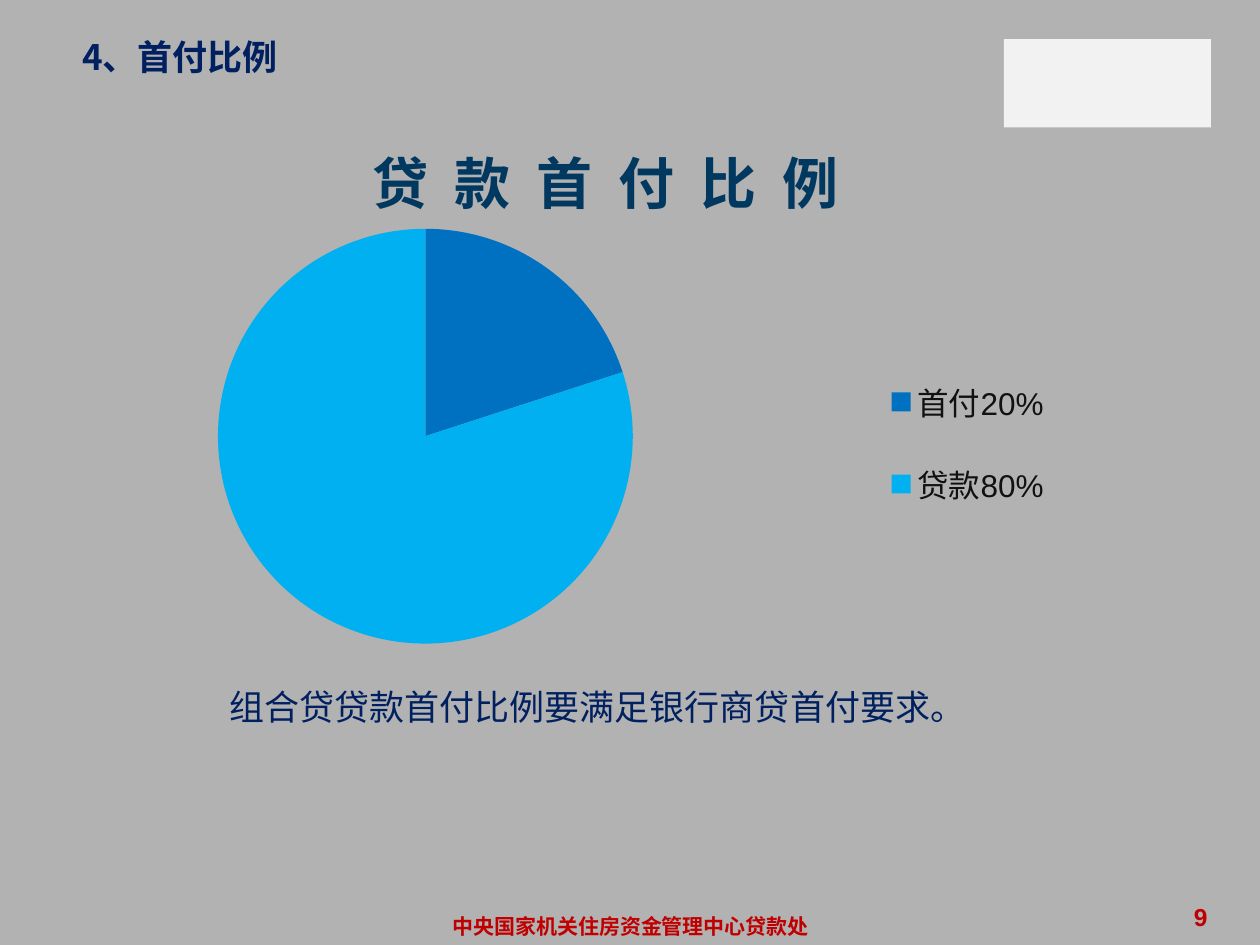
from lxml.etree import SubElement
from pptx import Presentation
from pptx.chart.data import CategoryChartData
from pptx.dml.color import RGBColor
from pptx.enum.chart import XL_CHART_TYPE, XL_LEGEND_POSITION
from pptx.enum.shapes import MSO_SHAPE
from pptx.enum.text import MSO_ANCHOR, PP_ALIGN
from pptx.oxml.ns import qn
from pptx.util import Cm, Pt

# Content
HEADING = "4、首付比例"
CHART_TITLE = "贷款首付比例"
SHARES = {"首付20%": 20, "贷款80%": 80}
NOTE = "组合贷贷款首付比例要满足银行商贷首付要求。"
FOOTER = "中央国家机关住房资金管理中心贷款处"
PAGE_NUMBER = "9"

THEME = {
    "latin": "Arial", "cjk": "Noto Sans CJK SC",
    "background": "B2B2B2", "panel": "F2F2F2",
    "navy": "002060", "red": "C00000", "title": "003860", "legend": "111111",
    "slices": ("0070C0", "00B0F0"),
    "body_size": 20, "chart_title_size": 32, "legend_size": 18,
    "footer_size": 12, "number_size": 14,
}


def color(name):
    return RGBColor.from_string(THEME.get(name, name))


def style_font(font, face, size, tint, bold=False):
    font.name = THEME[face]
    font.size = Pt(THEME[size])
    font.color.rgb = color(tint)
    font.bold = bold


def set_east_asian(properties):
    """Name the Chinese typeface right after the Latin one."""
    face = properties.makeelement(qn("a:ea"), {"typeface": THEME["cjk"]})
    properties.find(qn("a:latin")).addnext(face)


def write_text(box, place, text, face, size, tint, bold=False,
               align=PP_ALIGN.LEFT, anchor=MSO_ANCHOR.TOP):
    box.left, box.top, box.width, box.height = map(Cm, place)
    frame = box.text_frame
    frame.text = text
    frame.word_wrap = True
    frame.vertical_anchor = anchor
    para = frame.paragraphs[0]
    para.alignment = align
    span = para.runs[0]
    style_font(span.font, face, size, tint, bold)
    set_east_asian(span.font._element)


def place_part(part, previous, **fractions):
    """Give a chart part a manual layout, in fractions of the chart."""
    for old in part.findall(qn("c:layout")):
        part.remove(old)
    layout = part.makeelement(qn("c:layout"), {})
    if previous is None:
        part.insert(0, layout)
    else:
        part.find(qn(previous)).addnext(layout)
    manual = SubElement(layout, qn("c:manualLayout"))
    if previous is None:
        SubElement(manual, qn("c:layoutTarget"), val="inner")
    for mode in ("xMode", "yMode"):
        SubElement(manual, qn(f"c:{mode}"), val="edge")
    for name, value in fractions.items():
        SubElement(manual, qn(f"c:{name}"), val=str(value))


def add_share_chart(page):
    data = CategoryChartData()
    data.categories = list(SHARES)
    data.add_series("Series 1", list(SHARES.values()))
    chart = page.shapes.add_chart(XL_CHART_TYPE.PIE, Cm(1.57), Cm(1.78),
                                  Cm(21.23), Cm(13.49), data).chart
    style_font(chart.font, "latin", "legend_size", "legend")

    # Slices
    plot = chart.plots[0]
    plot.vary_by_categories = True
    for index, tint in enumerate(THEME["slices"]):
        fill = plot.series[0].points[index].format.fill
        fill.solid()
        fill.fore_color.rgb = color(tint)
    place_part(chart._chartSpace.chart.plotArea, None,
               x=0.01, y=0.21, w=0.64, h=0.62)

    # Widely spaced chart title
    chart.has_title = True
    title = chart.chart_title
    title.text_frame.text = CHART_TITLE
    span = title.text_frame.paragraphs[0].runs[0]
    style_font(span.font, "latin", "chart_title_size", "title", True)
    set_east_asian(span.font._element)
    span.font._element.set("spc", "1470")
    title.include_in_layout = False
    place_part(title._element, "c:tx", x=0.27, y=0.05)

    # Legend
    chart.has_legend = True
    legend = chart.legend
    legend.position = XL_LEGEND_POSITION.RIGHT
    legend.include_in_layout = False
    style_font(legend.font, "latin", "legend_size", "legend")
    place_part(legend._element, "c:legendPos", x=0.72, y=0.38, w=0.25, h=0.3)


def main():
    deck = Presentation()
    deck.slide_width, deck.slide_height = Cm(25.4), Cm(19.05)
    page = deck.slides.add_slide(deck.slide_layouts[5])
    page.background.fill.solid()
    page.background.fill.fore_color.rgb = color("background")

    # Corner panel
    panel = page.shapes.add_shape(MSO_SHAPE.RECTANGLE, Cm(20.24), Cm(0.79),
                                  Cm(4.17), Cm(1.78))
    panel.shadow.inherit = False
    panel.fill.solid()
    panel.fill.fore_color.rgb = color("panel")
    panel.line.fill.background()

    add_share_chart(page)

    # Heading, note and footer
    write_text(page.shapes.title, (1.4, 0.58, 15.47, 1.12), HEADING,
               "cjk", "body_size", "navy", bold=True)
    for place, text, face, size, tint, bold, align, anchor in (
        ((4.37, 13.69, 15.47, 1.12), NOTE, "cjk", "body_size", "navy",
         False, PP_ALIGN.LEFT, MSO_ANCHOR.TOP),
        ((8.69, 18.31, 8.05, 0.74), FOOTER, "latin", "footer_size", "red",
         True, PP_ALIGN.CENTER, MSO_ANCHOR.MIDDLE),
        ((18.67, 18.11, 5.92, 0.74), PAGE_NUMBER, "latin", "number_size", "red",
         True, PP_ALIGN.RIGHT, MSO_ANCHOR.MIDDLE),
    ):
        box = page.shapes.add_textbox(0, 0, 0, 0)
        write_text(box, place, text, face, size, tint, bold, align, anchor)

    deck.save("out.pptx")


if __name__ == "__main__":
    main()
